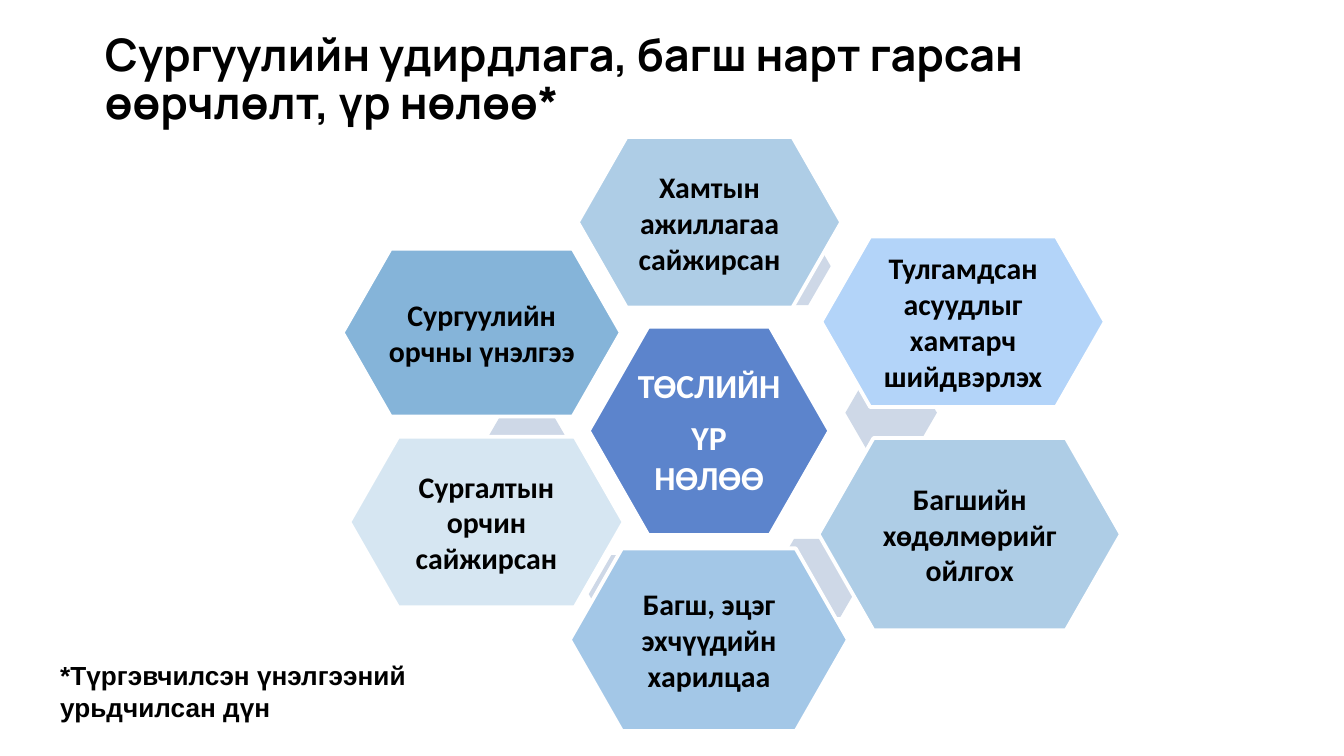
"""Build a slide with a hub hexagon surrounded by six outcome hexagons."""
import pptx
import pptx.util
import pptx.dml.color
import pptx.enum.shapes
import pptx.enum.text

Pt = pptx.util.Pt
Align = pptx.enum.text.PP_ALIGN
Anchor = pptx.enum.text.MSO_ANCHOR

COLOURS = {
    "black": "000000", "white": "FFFFFF", "hub": "5C84CC", "link": "CED8E7",
    "sky": "AECDE6", "bright": "B3D4F9", "soft": "A3C7E7",
    "pale": "D6E6F2", "deep": "85B4D9",
}
TITLE = "Сургуулийн удирдлага, багш нарт гарсан өөрчлөлт, үр нөлөө*"
FOOTNOTE = "*Түргэвчилсэн үнэлгээний урьдчилсан дүн"
HUB = (["ТӨСЛИЙН", "ҮР НӨЛӨӨ"], (315.4, 175, 128.9, 111.6))
LINK_SIZE = (49, 41.8)
PETALS = [
    ("Хамтын ажиллагаа сайжирсан", "sky", (309.6, 73.4, 141.1, 91.4), (396, 121.7)),
    ("Тулгамдсан асуудлыг хамтарч шийдвэрлэх", "bright", (440, 126.7, 151.9, 91.4), (452.9, 200.2)),
    ("Багшийн хөдөлмөрийг ойлгох", "sky", (438.5, 234.7, 162, 103), (413.3, 288.7)),
    ("Багш, эцэг эхчүүдийн харилцаа", "soft", (305.3, 293.8, 149, 97.9), (315.4, 297.4)),
    ("Сургалтын орчин сайжирсан", "pale", (187.2, 234, 146.9, 91.4), (257.8, 219.6)),
    ("Сургуулийн орчны үнэлгээ", "deep", (183.6, 133.2, 149, 90), None),
]


def colour(name):
    return pptx.dml.color.RGBColor.from_string(COLOURS[name])


def points(frame):
    return [Pt(value) for value in frame]


def write(text_frame, lines, font, size, ink, align, inset, anchor=Anchor.TOP, gap=0):
    text_frame.word_wrap = True
    text_frame.auto_size = pptx.enum.text.MSO_AUTO_SIZE.NONE
    text_frame.vertical_anchor = anchor
    text_frame.margin_left = text_frame.margin_right = Pt(inset[0])
    text_frame.margin_top = text_frame.margin_bottom = Pt(inset[1])
    for index, line in enumerate(lines):
        para = text_frame.add_paragraph() if index else text_frame.paragraphs[0]
        para.alignment = align
        para.space_before = Pt(gap if index else 0)
        span = para.add_run()
        span.text = line
        span.font.name, span.font.size, span.font.bold = font, Pt(size), True
        span.font.color.rgb = colour(ink)


def add_hexagon(page, frame, fill, bend, outlined=True):
    hexagon = page.shapes.add_shape(
        pptx.enum.shapes.MSO_SHAPE.HEXAGON, *points(frame))
    hexagon.adjustments[0] = bend
    hexagon.shadow.inherit = False
    hexagon.fill.solid()
    hexagon.fill.fore_color.rgb = colour(fill)
    if outlined:
        hexagon.line.color.rgb = colour("white")
        hexagon.line.width = Pt(2)
    else:
        hexagon.line.fill.background()


def add_label(page, frame, lines, size, ink, share, inset):
    left, top, width, height = frame
    inner = (left + width * share, top + height * share,
             width * (1 - 2 * share), height * (1 - 2 * share))
    box = page.shapes.add_textbox(*points(inner))
    write(box.text_frame, lines, "Calibri", size, ink, Align.CENTER,
          (inset, inset), Anchor.MIDDLE, gap=size * 0.35)


def main():
    deck = pptx.Presentation()
    deck.slide_width, deck.slide_height = Pt(720), Pt(405)
    page = deck.slides.add_slide(deck.slide_layouts[5])

    title = page.shapes.title
    title.left, title.top, title.width, title.height = points((49, 10.1, 587.5, 44.6))
    write(title.text_frame, [TITLE], "Manrope", 24, "black", Align.LEFT, (7.2, 7.2))
    title.text_frame.paragraphs[0].line_spacing = 0.9

    hub_lines, hub_frame = HUB
    add_hexagon(page, hub_frame, "hub", 0.286)
    add_label(page, hub_frame, hub_lines, 18, "white", 0.167, 2.2)

    for label, fill, frame, link in PETALS:
        if link:
            add_hexagon(page, link + LINK_SIZE, "link", 0.289, outlined=False)
        add_hexagon(page, frame, fill, 0.286)
        add_label(page, frame, [label], 16, "black", 0.143, 1.4)

    footnote = page.shapes.add_textbox(*points((25.2, 350, 266.4, 41)))
    write(footnote.text_frame, [FOOTNOTE], "Arial", 14, "black", Align.LEFT, (7.2, 3.6))

    deck.save("out.pptx")


if __name__ == "__main__":
    main()
